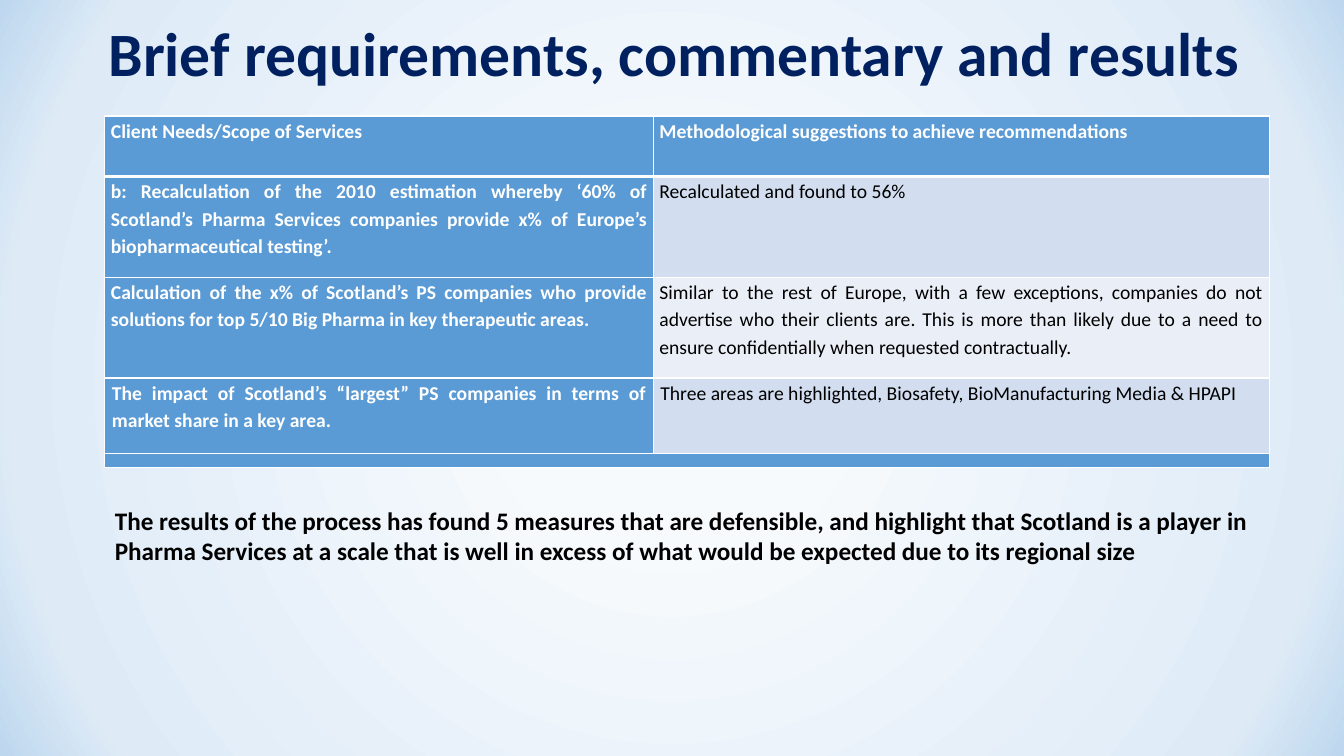
from dataclasses import dataclass

from lxml.etree import SubElement
from pptx import Presentation
from pptx.dml.color import RGBColor
from pptx.enum.text import MSO_ANCHOR, MSO_AUTO_SIZE, PP_ALIGN
from pptx.oxml.ns import qn
from pptx.util import Inches, Pt


@dataclass(frozen=True)
class Theme:
    """Colours, type sizes and font of the slide."""
    font: str = "Calibri"
    navy: str = "002060"
    blue: str = "5B9BD5"
    white: str = "FFFFFF"
    black: str = "000000"
    bands: tuple = ("D2DEEF", "EAEFF7")
    glow: tuple = ((20, "F7FAFD"), (86, "DEEBF7"), (100, "BDD7EE"))
    title: int = 44
    note: int = 18
    body: int = 14
    tiny: int = 6


THEME = Theme()
HEAD = ("Client Needs/Scope of Services",
        "Methodological suggestions to achieve recommendations")
NEEDS = (
    ("b: Recalculation of the 2010 estimation whereby ‘60% of Scotland’s Pharma Services "
     "companies provide x% of Europe’s biopharmaceutical testing’.",
     "Recalculated and found to 56%"),
    ("Calculation of the x% of Scotland’s PS companies who provide solutions for top 5/10 "
     "Big Pharma in key therapeutic areas.",
     "Similar to the rest of Europe, with a few exceptions, companies do not advertise who "
     "their clients are. This is more than likely due to a need to ensure confidentially "
     "when requested contractually."),
    ("The impact of Scotland’s “largest” PS companies in terms of market share in a key area.",
     "Three areas are highlighted, Biosafety, BioManufacturing Media & HPAPI"),
)
NOTE = ("The results of the process has found 5 measures that are defensible, and highlight "
        "that Scotland is a player in Pharma Services at a scale that is well in excess of "
        "what would be expected due to its regional size")


def add_run(para, text, size, color, bold=True):
    """Add one styled run to a paragraph."""
    run = para.add_run()
    run.text = text
    run.font.name = THEME.font
    run.font.size = Pt(size)
    run.font.bold = bold
    run.font.color.rgb = RGBColor.from_string(color)


def paint_back(slide):
    """Fill the background with a round glow from the centre."""
    slide.background.fill.gradient()
    grad = slide.element.find(".//" + qn("a:gradFill"))
    for child in list(grad):
        grad.remove(child)
    stops = SubElement(grad, qn("a:gsLst"))
    for place, color in THEME.glow:
        stop = SubElement(stops, qn("a:gs"), pos=str(place * 1000))
        SubElement(stop, qn("a:srgbClr"), val=color)
    ring = SubElement(grad, qn("a:path"), path="circle")
    SubElement(ring, qn("a:fillToRect"), l="50000", t="50000", r="50000", b="50000")


def add_text(slide, box, text, size, color, align, anchor):
    """Place a wrapped line of bold text in the box."""
    frame = slide.shapes.add_textbox(*map(Inches, box)).text_frame
    frame.word_wrap = True
    frame.vertical_anchor = anchor
    para = frame.paragraphs[0]
    para.alignment = align
    add_run(para, text, size, color)
    return frame


def add_title(slide, box):
    """Place the slide title."""
    frame = add_text(slide, box, "Brief requirements, commentary and results",
                     THEME.title, THEME.navy, PP_ALIGN.CENTER, MSO_ANCHOR.MIDDLE)
    frame.paragraphs[0].line_spacing = 0.9


def style_cell(cell, fill, base=1, pad=0.06):
    """Give a cell its white borders, margins and fill."""
    props = cell._tc.get_or_add_tcPr()
    for side, width in (("L", 1), ("R", 1), ("T", 1), ("B", base)):
        line = SubElement(props, qn("a:ln" + side), w=str(Pt(width)))
        solid = SubElement(line, qn("a:solidFill"))
        SubElement(solid, qn("a:srgbClr"), val=THEME.white)
    cell.margin_left = cell.margin_right = Inches(pad)
    cell.margin_top = cell.margin_bottom = 0
    cell.fill.solid()
    cell.fill.fore_color.rgb = RGBColor.from_string(fill)


def fill_cell(cell, text, color, bold):
    """Write justified text into a cell."""
    para = cell.text_frame.paragraphs[0]
    para.alignment = PP_ALIGN.JUSTIFY
    para.line_spacing = 1.15
    add_run(para, text, THEME.body, color, bold)


def add_needs(slide, box):
    """Place the table of needs and results, closed by a thin bar."""
    cols, rows = (5.44, 6.11), (0.6, 1, 1, 0.75, 0.14)
    table = slide.shapes.add_table(len(rows), len(cols), *map(Inches, box)).table
    for col, width in zip(table.columns, cols):
        col.width = Inches(width)
    for row, height in zip(table.rows, rows):
        row.height = Inches(height)
    for i, texts in enumerate((HEAD, *NEEDS)):
        for j, text in enumerate(texts):
            cell = table.cell(i, j)
            plain = i > 0 and j > 0
            fill = THEME.bands[(i - 1) % 2] if plain else THEME.blue
            style_cell(cell, fill, 1 if i else 3, 0.07 if i == len(NEEDS) else 0.06)
            fill_cell(cell, text, THEME.black if plain else THEME.white, not plain)
    last = len(rows) - 1
    table.cell(last, 0).merge(table.cell(last, 1))
    for j in range(len(cols)):
        cell = table.cell(last, j)
        style_cell(cell, THEME.blue)
        para = cell.text_frame.paragraphs[0]
        SubElement(para._p, qn("a:endParaRPr"), sz=str(THEME.tiny * 100))


def add_note(slide, box):
    """Place the closing statement."""
    frame = add_text(slide, box, NOTE, THEME.note, THEME.black,
                     PP_ALIGN.LEFT, MSO_ANCHOR.TOP)
    frame.auto_size = MSO_AUTO_SIZE.SHAPE_TO_FIT_TEXT


def main():
    """Build the slide and save it."""
    deck = Presentation()
    deck.slide_width, deck.slide_height = Inches(13.33), Inches(7.5)
    slide = deck.slides.add_slide(deck.slide_layouts[6])
    paint_back(slide)
    add_title(slide, (0.47, 0.18, 12.44, 0.77))
    add_needs(slide, (1.04, 1.15, 11.55, 3.5))
    add_note(slide, (1.04, 4.96, 11.88, 0.71))
    deck.save("out.pptx")


if __name__ == "__main__":
    main()
